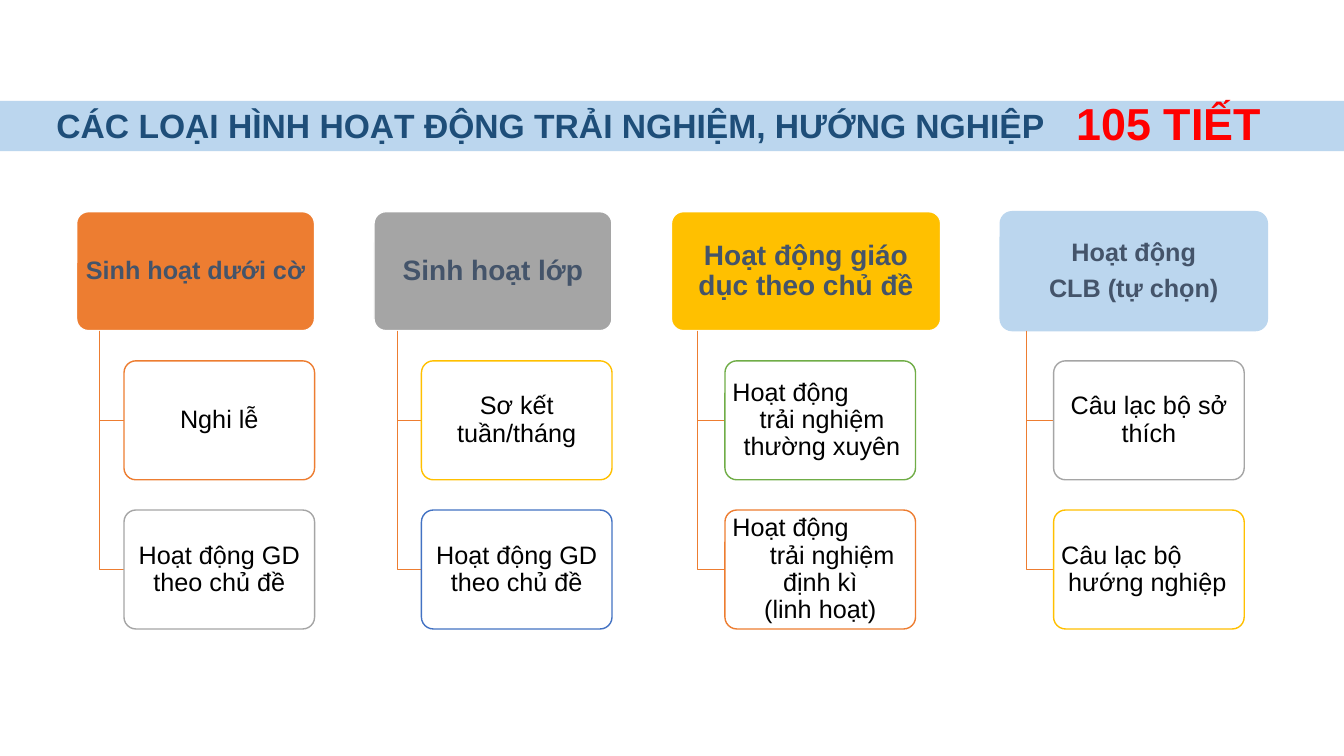
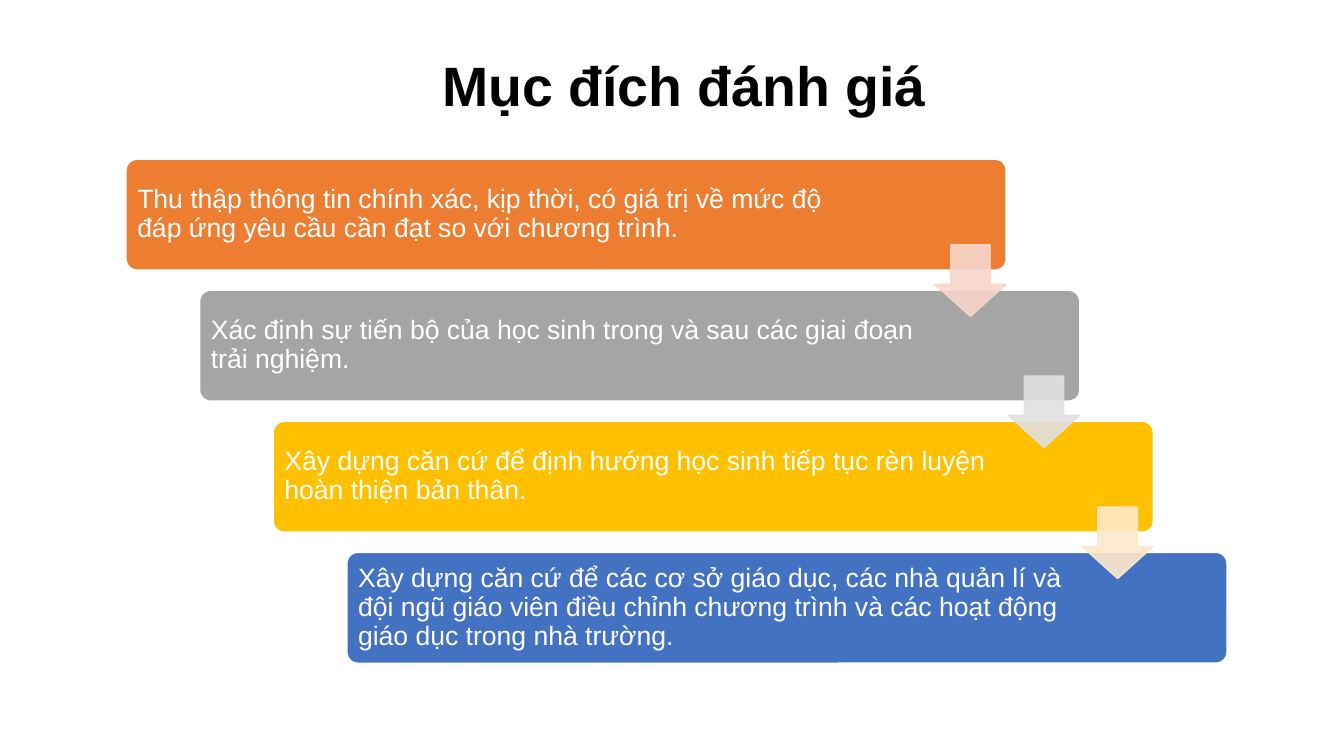
from dataclasses import dataclass

from lxml import etree
from pptx import Presentation
from pptx.dml.color import RGBColor
from pptx.enum.shapes import MSO_SHAPE
from pptx.enum.text import MSO_ANCHOR, PP_ALIGN
from pptx.oxml.ns import qn
from pptx.util import Pt

PX = 9144  # EMU per px, 100 px to the inch
SLIDE_W, SLIDE_H = 1333, 750
FONT = "Arial"
RECT, ROUND, ARROW = MSO_SHAPE.RECTANGLE, MSO_SHAPE.ROUNDED_RECTANGLE, MSO_SHAPE.DOWN_ARROW
LEFT, CENTER = PP_ALIGN.LEFT, PP_ALIGN.CENTER
TOP, MIDDLE, BOTTOM = MSO_ANCHOR.TOP, MSO_ANCHOR.MIDDLE, MSO_ANCHOR.BOTTOM

COLORS = {
    "white": "FFFFFF", "black": "000000", "red": "FF0000", "navy": "1E4E79",
    "slate": "44546A", "sky": "BBD6EE", "orange": "ED7D31", "gray": "A5A5A5",
    "gold": "FFC000", "blue": "4372C3", "green": "70AD47",
    "pale_orange": "F7D5CB", "pale_gray": "E0E0E0", "pale_gold": "FFE8CA",
}


@dataclass(frozen=True)
class Box:
    x: int
    y: int
    w: int
    h: int


@dataclass(frozen=True)
class TextStyle:
    size: float
    color: str
    bold: bool = False
    align: int = LEFT
    anchor: int = MIDDLE
    insets: tuple[int, int, int, int] = (10, 5, 10, 5)  # left, top, right, bottom


@dataclass(frozen=True)
class Line:
    text: str
    align: int | None = None
    indent: int = 0
    before: float = 0


@dataclass(frozen=True)
class Activity:
    lines: list[Line]
    outline: str


@dataclass(frozen=True)
class Category:
    lines: list[Line]
    fill: str
    outline: str
    size: int
    width: int
    activities: list[Activity]


@dataclass(frozen=True)
class Purpose:
    text: str
    fill: str
    arrow: str | None


# Shared drawing functions
def paint(target, color: str, alpha: int = 100) -> None:
    """Colour a solid fill, a line fill or a font."""
    target.rgb = RGBColor.from_string(COLORS[color])
    if alpha < 100:
        for rgb in target._xFill.iter(qn("a:srgbClr")):
            etree.SubElement(rgb, qn("a:alpha"), val=str(alpha * 1000))


def write(shape, lines: list[Line], style: TextStyle) -> None:
    frame = shape.text_frame
    sides = ("margin_left", "margin_top", "margin_right", "margin_bottom")
    layout = {side: inset * PX for side, inset in zip(sides, style.insets)}
    for name, value in {**layout, "word_wrap": True, "vertical_anchor": style.anchor}.items():
        setattr(frame, name, value)
    for index, line in enumerate(lines):
        paragraph = frame.add_paragraph() if index else frame.paragraphs[0]
        paragraph.alignment = style.align if line.align is None else line.align
        paragraph.line_spacing = 0.9
        if line.before:
            paragraph.space_before = Pt(line.before)
        if line.indent:
            paragraph._p.get_or_add_pPr().set("marL", str(line.indent * PX))
        run = paragraph.add_run()
        run.text = line.text
        for name, value in {"name": FONT, "size": Pt(style.size), "bold": style.bold}.items():
            setattr(run.font, name, value)
        run.font.color.rgb = RGBColor.from_string(COLORS[style.color])


def add_text(slide, box: Box, text: str, style: TextStyle) -> None:
    label = slide.shapes.add_textbox(box.x * PX, box.y * PX, box.w * PX, box.h * PX)
    write(label, [Line(text)], style)


def set_alpha(fill_parent, alpha: int) -> None:
    for rgb in fill_parent.iter(qn("a:srgbClr")):
        etree.SubElement(rgb, qn("a:alpha"), val=str(alpha * 1000))


def add_block(slide, kind: int, box: Box, fill: str, outline: str | None = None,
              adjust: tuple[float, ...] = (), alpha: int = 100):
    block = slide.shapes.add_shape(kind, box.x * PX, box.y * PX, box.w * PX, box.h * PX)
    block.shadow.inherit = False
    for index, value in enumerate(adjust):
        block.adjustments[index] = value
    block.fill.solid()
    block.fill.fore_color.rgb = RGBColor.from_string(COLORS[fill])
    if alpha < 100:
        set_alpha(block._element.spPr, alpha)
    if outline is None:
        block.line.fill.background()
    else:
        block.line.color.rgb = RGBColor.from_string(COLORS[outline])
        block.line.width = Pt(1)
        if alpha < 100 and outline == fill:
            set_alpha(block.line._get_or_add_ln(), alpha)
    return block


def add_branch(slide, trunk_x: int, top: int, end_x: int, end_y: int) -> None:
    builder = slide.shapes.build_freeform(trunk_x, top, scale=PX)
    builder.add_line_segments([(trunk_x, end_y), (end_x, end_y)], close=False)
    branch = builder.convert_to_shape()
    branch.shadow.inherit = False
    branch.fill.background()
    branch.line.color.rgb = RGBColor.from_string(COLORS["orange"])
    branch.line.width = Pt(1)


# Slide 1: activity types
BAND = Box(0, 100, SLIDE_W, 50)
TREE_X, TREE_Y, COLUMN_GAP, ROW_STEP = 76, 210, 59, 148
NODE_W, NODE_H = 189, 118
NODE_INSETS = (4, 2, 4, 2)
THEMED = [Line("Hoạt động GD theo chủ đề")]

CATEGORIES = [
    Category([Line("Sinh hoạt dưới cờ")], "orange", "white", 18, 236, [
        Activity([Line("Nghi lễ")], "orange"),
        Activity(THEMED, "gray"),
    ]),
    Category([Line("Sinh hoạt lớp")], "gray", "white", 20, 236, [
        Activity([Line("Sơ kết tuần/tháng")], "gold"),
        Activity(THEMED, "blue"),
    ]),
    Category([Line("Hoạt động giáo dục theo chủ đề")], "gold", "white", 20, 267, [
        Activity([Line("Hoạt động", LEFT), Line("trải nghiệm", LEFT, 27),
                  Line("thường xuyên", LEFT, 11)], "green"),
        Activity([Line("Hoạt động", LEFT), Line("trải nghiệm", LEFT, 37),
                  Line("định kì"), Line("(linh hoạt)")], "orange"),
    ]),
    Category([Line("Hoạt động"), Line("CLB (tự chọn)", before=6.3)], "sky", "sky", 18, 265, [
        Activity([Line("Câu lạc bộ sở thích")], "gray"),
        Activity([Line("Câu lạc bộ", LEFT), Line("hướng nghiệp", LEFT, 7)], "gold"),
    ]),
]


def add_category(slide, category: Category, left: int) -> None:
    header = add_block(slide, ROUND, Box(left, TREE_Y, category.width, NODE_H),
                       category.fill, category.outline, (0.1,))
    write(header, category.lines,
          TextStyle(category.size, "slate", True, CENTER, insets=NODE_INSETS))
    trunk_x, node_x = left + category.width // 10, left + category.width // 5
    for row, activity in enumerate(category.activities, start=1):
        top = TREE_Y + row * ROW_STEP
        add_branch(slide, trunk_x, TREE_Y + NODE_H, node_x, top + NODE_H // 2)
        node = add_block(slide, ROUND, Box(node_x, top, NODE_W, NODE_H),
                         "white", activity.outline, (0.1,), 89)
        write(node, activity.lines, TextStyle(18, "black", align=CENTER, insets=NODE_INSETS))


def build_activity_types(slide) -> None:
    band = add_block(slide, RECT, BAND, "sky")
    write(band, [Line("CÁC LOẠI HÌNH HOẠT ĐỘNG TRẢI NGHIỆM, HƯỚNG NGHIỆP")],
          TextStyle(24, "navy", True, anchor=BOTTOM, insets=(56, 5, 10, 5)))
    left = TREE_X
    for category in CATEGORIES:
        add_category(slide, category, left)
        left += category.width + COLUMN_GAP
    add_text(slide, Box(1058, 96, 225, 59), "105 TIẾT", TextStyle(32, "red", True, anchor=TOP))


# Slide 2: purposes of assessment
FIRST_BAR = Box(125, 158, 873, 110)
BAR_STEP_X, BAR_STEP_Y = 73, 130
ARROW_SIZE, ARROW_DROP = 71, 85

PURPOSES = [
    Purpose("Thu thập thông tin chính xác, kịp thời, có giá trị về mức độ đáp ứng "
            "yêu cầu cần đạt so với chương trình.", "orange", "pale_orange"),
    Purpose("Xác định sự tiến bộ của học sinh trong và sau các giai đoạn trải nghiệm.",
            "gray", "pale_gray"),
    Purpose("Xây dựng căn cứ để định hướng học sinh tiếp tục rèn luyện hoàn thiện bản thân.",
            "gold", "pale_gold"),
    Purpose("Xây dựng căn cứ để các cơ sở giáo dục, các nhà quản lí và đội ngũ giáo viên "
            "điều chỉnh chương trình và các hoạt động giáo dục trong nhà trường.", "blue", None),
]


def build_purposes(slide) -> None:
    add_text(slide, Box(429, 50, 696, 75), "Mục đích đánh giá", TextStyle(39.6, "black", True))
    bars = [Box(FIRST_BAR.x + step * BAR_STEP_X, FIRST_BAR.y + step * BAR_STEP_Y,
                FIRST_BAR.w, FIRST_BAR.h) for step in range(len(PURPOSES))]
    for purpose, box in zip(PURPOSES, bars):
        bar = add_block(slide, ROUND, box, purpose.fill, "white", (0.1,))
        write(bar, [Line(purpose.text)], TextStyle(19, "white", insets=(8, 8, 153, 8)))
    # Arrows lie over the bars
    for purpose, box in zip(PURPOSES, bars):
        if purpose.arrow:
            place = Box(box.x + box.w - ARROW_SIZE, box.y + ARROW_DROP, ARROW_SIZE, ARROW_SIZE)
            add_block(slide, ARROW, place, purpose.arrow, purpose.arrow, (0.55, 0.45), 90)


def main() -> None:
    deck = Presentation()
    deck.slide_width, deck.slide_height = SLIDE_W * PX, SLIDE_H * PX
    blank = deck.slide_layouts[6]
    for build in (build_activity_types, build_purposes):
        build(deck.slides.add_slide(blank))
    deck.save("out.pptx")


if __name__ == "__main__":
    main()
